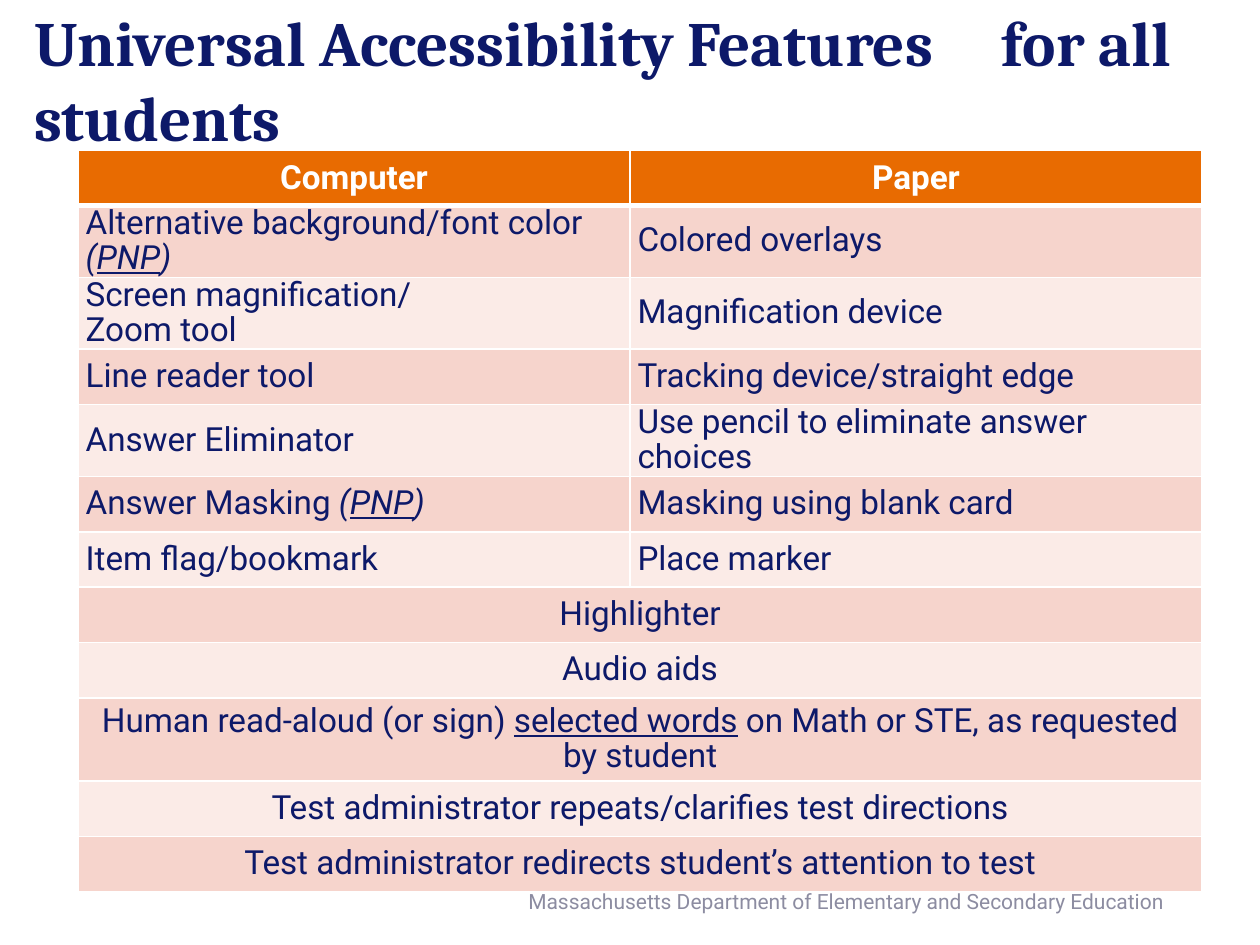
import pptx
import pptx.dml.color
import pptx.enum.text
import pptx.oxml
import pptx.oxml.ns
import pptx.util
from pptx.util import Inches

NAVY, GREY, WHITE, ORANGE = "0D1969", "8C8CA1", "FFFFFF", "E86B01"
BANDS = ("F6D4CC", "FBEBE7")
ALIGN = pptx.enum.text.PP_ALIGN
MIDDLE = pptx.enum.text.MSO_ANCHOR.MIDDLE

# A cell is a list of paragraphs; a paragraph is a list of (text, style) runs,
# where style holds "i" for italic and "u" for underline.
PNP = [("(", "i"), ("PNP", "iu"), (")", "i")]
PAIRED_FEATURES = [
    (0.57, [[("Alternative background/font color ", ""), *PNP]], "Colored overlays"),
    (0.57, [[("Screen magnification/", "")], [("Zoom tool", "")]], "Magnification device"),
    (0.44, "Line reader tool", "Tracking device/straight edge"),
    (0.57, "Answer Eliminator", "Use pencil to eliminate answer choices"),
    (0.44, [[("Answer Masking ", ""), *PNP]], "Masking using blank card"),
    (0.44, "Item flag/bookmark", "Place marker"),
]
SHARED_FEATURES = [
    (0.44, "Highlighter"),
    (0.44, "Audio aids"),
    (0.66, [[("Human read-aloud (or sign) ", ""), ("selected words", "u"),
             (" on Math or STE, as requested by student", "")]]),
    (0.44, "Test administrator repeats/clarifies test directions"),
    (0.44, "Test administrator redirects student’s attention to test"),
]


def rgb(color):
    return pptx.dml.color.RGBColor.from_string(color)


def format_font(font, name, size, color, bold=False):
    font.name = name
    font.size = pptx.util.Pt(size)
    font.color.rgb = rgb(color)
    font.bold = bold


def set_borders(cell, bottom_width):
    properties = cell._tc.get_or_add_tcPr()
    for side, width in (("L", 1), ("R", 1), ("T", 1), ("B", bottom_width)):
        properties.append(pptx.oxml.parse_xml(
            f'<a:ln{side} {pptx.oxml.ns.nsdecls("a")} w="{pptx.util.Pt(width)}">'
            f'<a:solidFill><a:srgbClr val="{WHITE}"/></a:solidFill></a:ln{side}>'))


def fill_cell(cell, content, fill, centered=False, header=False):
    set_borders(cell, 3 if header else 1)
    cell.fill.solid()
    cell.fill.fore_color.rgb = rgb(fill)
    cell.vertical_anchor = MIDDLE
    cell.margin_left = cell.margin_right = Inches(0.06)
    cell.margin_top = cell.margin_bottom = 0
    paragraphs = [[(content, "")]] if isinstance(content, str) else content
    for index, runs in enumerate(paragraphs):
        frame = cell.text_frame
        paragraph = frame.add_paragraph() if index else frame.paragraphs[0]
        paragraph.alignment = ALIGN.CENTER if centered else ALIGN.LEFT
        paragraph.line_spacing = 1.0 if header else 0.9
        for text, style in runs:
            run = paragraph.add_run()
            run.text = text
            format_font(run.font, "Roboto", 19, WHITE if header else NAVY, header)
            run.font.italic = "i" in style
            run.font.underline = "u" in style


def add_title(slide):
    title = slide.shapes.title
    title.left, title.top = Inches(0.17), 0
    title.width, title.height = Inches(9.83), Inches(1.25)
    frame = title.text_frame
    frame.auto_size = pptx.enum.text.MSO_AUTO_SIZE.NONE
    frame.word_wrap = True
    frame.vertical_anchor = MIDDLE
    heading = frame.paragraphs[0]
    heading.text = "Universal Accessibility Features\tfor all students"
    heading.alignment = ALIGN.LEFT
    heading._p.get_or_add_pPr().append(pptx.oxml.parse_xml(
        f'<a:tabLst {pptx.oxml.ns.nsdecls("a")}>'
        f'<a:tab pos="{Inches(7.68)}" algn="l"/></a:tabLst>'))
    for run in heading.runs:
        format_font(run.font, "Cambria", 36, NAVY, True)


def add_footer(slide):
    footer = slide.shapes.add_textbox(Inches(3.42), Inches(6.95), Inches(5.92), Inches(0.4))
    frame = footer.text_frame
    frame.word_wrap = True
    frame.vertical_anchor = MIDDLE
    credit = frame.paragraphs[0]
    credit.text = "Massachusetts Department of Elementary and Secondary Education"
    credit.alignment = ALIGN.RIGHT
    format_font(credit.runs[0].font, "Roboto", 12, GREY)


def add_features_table(slide):
    rows = [(0.44, "Computer", "Paper"), *PAIRED_FEATURES, *SHARED_FEATURES]
    table = slide.shapes.add_table(len(rows), 2, Inches(0.62), Inches(1.19),
                                   Inches(8.92), Inches(5.89)).table
    for column, width in zip(table.columns, (4.38, 4.54)):
        column.width = Inches(width)
    for index, (height, *contents) in enumerate(rows):
        table.rows[index].height = Inches(height)
        header, shared = index == 0, len(contents) == 1
        fill = ORANGE if header else BANDS[(index - 1) % 2]
        if shared:
            table.cell(index, 0).merge(table.cell(index, 1))
        for column, content in enumerate(contents):
            fill_cell(table.cell(index, column), content, fill, header or shared, header)


def main():
    presentation = pptx.Presentation()
    presentation.slide_width, presentation.slide_height = Inches(10), Inches(7.5)
    slide = presentation.slides.add_slide(presentation.slide_layouts.get_by_name("Title Only"))
    add_title(slide)
    add_footer(slide)
    add_features_table(slide)
    presentation.save("out.pptx")


if __name__ == "__main__":
    main()
